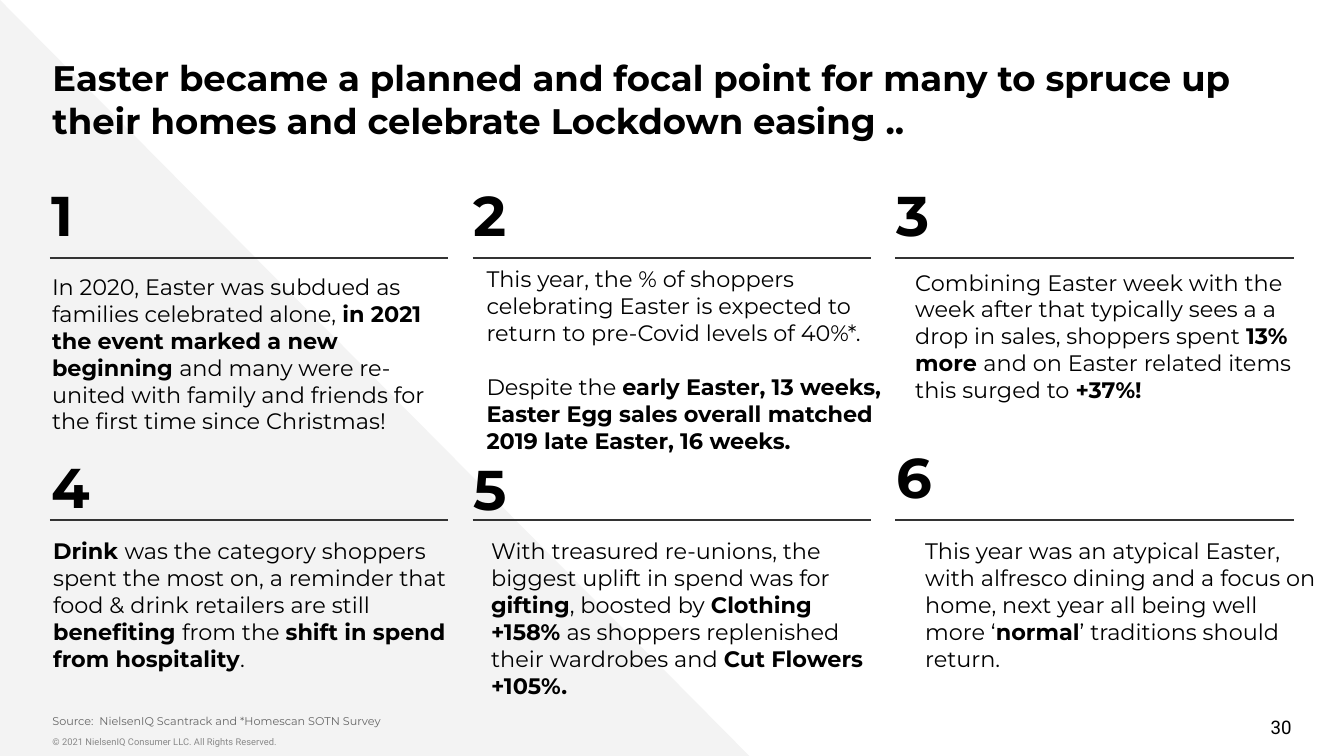
"""Build a slide of six numbered Easter findings on a fine square grid."""
import dataclasses
import typing

import pptx
import pptx.dml.color
import pptx.enum.shapes
import pptx.enum.text
import pptx.oxml.ns
import pptx.util
from lxml import etree

COLS, ROWS = 100, 56.25
UNIT = pptx.util.Inches(10) / COLS
LEFT, TOP = 3.72, 19.2
STEP, DROP, SPAN = 31.45, 19.5, 29.65
HUES = {"ink": "000000", "rule": "333333", "note": "666666",
        "legal": "888888", "wedge": "F3F3F3"}
ALIGN = pptx.enum.text.PP_ALIGN
ANCHOR = pptx.enum.text.MSO_ANCHOR


@dataclasses.dataclass(frozen=True)
class Box:
    """A place on the grid, in columns and rows."""
    col: float
    row: float
    wide: float
    high: float


@dataclasses.dataclass(frozen=True)
class Card:
    """One finding, with bars around bold words and offsets from its rule."""
    texts: tuple[str, ...]
    shift: float
    drop: float
    rise: float = 5.75
    wide: float = 29.5


CARDS = (
    Card(("In 2020, Easter was subdued as families celebrated alone, "
          "|in 2021 the event marked a new beginning |and many were re-united "
          "with family and friends for the first time since Christmas!",),
         0.15, 0.63),
    Card(("This year, the % of shoppers celebrating Easter is expected to "
          "return to pre-Covid levels of 40%*.",
          "Despite the |early Easter, 13 weeks, Easter Egg sales overall "
          "matched 2019 late Easter, 16 weeks."), 1.03, 0.07, wide=30.8),
    Card(("Combining Easter week with the week after that typically sees a a "
          "drop in sales, shoppers spent |13% more |and on Easter related "
          "items this surged to |+37%!",), 1.48, 0.3),
    Card(("|Drink |was the category shoppers spent the most on, a reminder "
          "that food & drink retailers are still |benefiting |from the "
          "|shift in spend from hospitality|.",), 0.23, 0.8, rise=5),
    Card(("With treasured re-unions, the biggest uplift in spend was for "
          "|gifting|, boosted by |Clothing +158% |as shoppers replenished "
          "their wardrobes and |Cut Flowers +105%.",), 1.37, 0.8, rise=4.9,
         wide=29.2),
    Card(("This year was an atypical Easter, with alfresco dining and a focus "
          "on home, next year all being well more ‘|normal|’ traditions "
          "should return.",), 2.22, 0.8),
)


def grid(*spots: float) -> list[int]:
    """Turn grid counts into slide lengths."""
    return [pptx.util.Emu(round(spot * UNIT)) for spot in spots]


def hue(name: str) -> pptx.dml.color.RGBColor:
    """Look up a named colour."""
    return pptx.dml.color.RGBColor.from_string(HUES[name])


def write(slide: typing.Any, box: Box, *texts: str, shape: typing.Any = None,
          size: float = 12, font: str = "Montserrat", color: str = "ink",
          bold: bool = False, align: typing.Any = ALIGN.LEFT,
          anchor: typing.Any = ANCHOR.TOP, pad: tuple[float, float] = (0.5, 0.5),
          gap: float = 14.5) -> None:
    """Write paragraphs, switching bold at each bar, in a new or given shape."""
    place = grid(*dataclasses.astuple(box))
    if shape is None:
        shape = slide.shapes.add_textbox(*place)
    shape.left, shape.top, shape.width, shape.height = place
    frame = shape.text_frame
    frame.word_wrap = True
    frame.auto_size = pptx.enum.text.MSO_AUTO_SIZE.NONE
    frame.vertical_anchor = anchor
    frame.margin_left = frame.margin_right = 0
    frame.margin_top, frame.margin_bottom = grid(*pad)
    for rank, text in enumerate(texts):
        para = frame.add_paragraph() if rank else frame.paragraphs[0]
        para.alignment = align
        para.space_before = pptx.util.Pt(gap if rank else 0)
        for turn, words in enumerate(text.split("|")):
            if words:
                run = para.add_run()
                run.text = words
                run.font.size = pptx.util.Pt(size)
                run.font.name = font
                run.font.bold = bold or turn % 2 == 1
                run.font.color.rgb = hue(color)


def wedge(slide: typing.Any, box: Box) -> None:
    """Draw the pale corner triangle."""
    shape = slide.shapes.add_shape(
        pptx.enum.shapes.MSO_SHAPE.RIGHT_TRIANGLE,
        *grid(*dataclasses.astuple(box)))
    shape.shadow.inherit = False
    shape.fill.solid()
    shape.fill.fore_color.rgb = hue("wedge")
    shape.line.fill.background()


def rule(slide: typing.Any, col: float, row: float) -> None:
    """Draw the thin line that heads a card."""
    line = slide.shapes.add_connector(
        pptx.enum.shapes.MSO_CONNECTOR.STRAIGHT,
        *grid(col, row, col + SPAN, row))
    line.line.color.rgb = hue("rule")
    line.line.width = pptx.util.Pt(0.75)
    etree.SubElement(line.element.spPr, pptx.oxml.ns.qn("a:effectLst"))


def draw(slide: typing.Any, rank: int, card: Card) -> None:
    """Draw a card's number, rule and text in its cell."""
    down, across = divmod(rank, 3)
    col, row = LEFT + across * STEP, TOP + down * DROP
    write(slide, Box(col + 0.1, row - card.rise, 17, 5.8), str(rank + 1),
          size=30, bold=True, pad=(0, 0.5))
    rule(slide, col, row)
    write(slide, Box(col + card.shift, row + card.drop, card.wide, 12.9),
          *card.texts)


def main() -> None:
    """Build and save the slide."""
    deck = pptx.Presentation()
    deck.slide_width, deck.slide_height = grid(COLS, ROWS)
    slide = deck.slides.add_slide(deck.slide_layouts[5])
    wedge(slide, Box(0, 0, 55.9, 56.4))
    title = slide.shapes.title
    title.element.getparent().append(title.element)
    write(slide, Box(3.9, 3.2, 92.2, 4.3),
          "Easter became a planned and focal point for many to spruce up "
          "their homes and celebrate Lockdown easing ..",
          shape=title, size=19, bold=True, pad=(1, 1))
    for rank, card in enumerate(CARDS):
        draw(slide, rank, card)
    write(slide, Box(3.9, 53.15, 89.2, 2),
          "Source:  NielsenIQ Scantrack and *Homescan SOTN Survey",
          size=6, color="note", anchor=ANCHOR.BOTTOM, pad=(1, 1))
    write(slide, Box(3.9, 54.3, 55.4, 2),
          "© 2021 NielsenIQ Consumer LLC. All Rights Reserved.",
          size=5, font="Roboto", color="legal")
    write(slide, Box(73.6, 52.6, 22.5, 3), "30", size=10, font="Roboto",
          align=ALIGN.RIGHT, anchor=ANCHOR.MIDDLE)
    deck.save("out.pptx")


if __name__ == "__main__":
    main()
